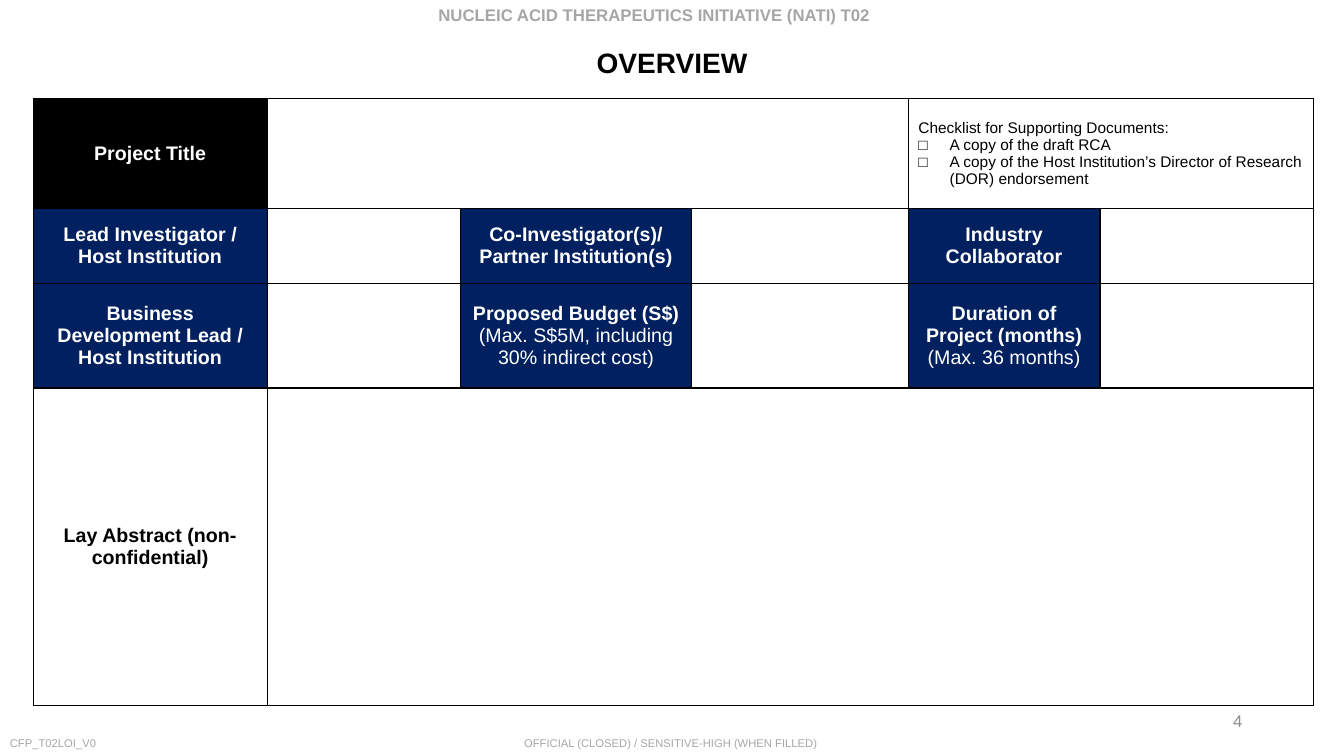
from dataclasses import dataclass

from lxml import etree
from pptx import Presentation
from pptx.dml.color import RGBColor
from pptx.enum.text import MSO_ANCHOR, PP_ALIGN
from pptx.oxml.ns import qn
from pptx.util import Inches, Pt

LEFT, CENTER, RIGHT = PP_ALIGN.LEFT, PP_ALIGN.CENTER, PP_ALIGN.RIGHT
TOP, MIDDLE = MSO_ANCHOR.TOP, MSO_ANCHOR.MIDDLE


@dataclass(frozen=True)
class Theme:
    font: str = "Arial"
    black: str = "000000"
    white: str = "FFFFFF"
    navy: str = "002060"
    muted: str = "A6A6A6"
    number: str = "8C8C8C"
    title: int = 20
    label: int = 14
    header: int = 12
    checklist: int = 11
    footer: int = 8
    border: float = 1
    bullet_indent: float = 0.31


THEME = Theme()


def add_text(p, text, size=THEME.label, color=THEME.black, bold=False, align=LEFT, bullet=None):
    p.alignment = align
    r = p.add_run()
    r.text = text
    r.font.name = THEME.font
    r.font.size = Pt(size)
    r.font.bold = bold
    r.font.color.rgb = RGBColor.from_string(color)
    if bullet:
        indent = Inches(THEME.bullet_indent)
        pPr = p._p.get_or_add_pPr()
        pPr.set("marL", str(indent))
        pPr.set("indent", str(-indent))
        etree.SubElement(pPr, qn("a:buFont"), typeface=THEME.font)
        etree.SubElement(pPr, qn("a:buChar"), char=bullet)


class SlideBuilder:
    def __init__(self, slide, theme):
        self.slide = slide
        self.theme = theme

    def text(self, box, text, wrap=True, anchor=TOP, **fmt):
        sp = self.slide.shapes.add_textbox(*map(Inches, box))
        tf = sp.text_frame
        tf.word_wrap = wrap
        tf.vertical_anchor = anchor
        add_text(tf.paragraphs[0], text, **fmt)

    def table(self, left, top, widths, heights, merges, cells):
        frame = self.slide.shapes.add_table(
            len(heights), len(widths), Inches(left), Inches(top),
            Inches(sum(widths)), Inches(sum(heights)))
        table = frame.table
        table.first_row = False
        table.horz_banding = False
        for column, width in zip(table.columns, widths):
            column.width = Inches(width)
        for row, height in zip(table.rows, heights):
            row.height = Inches(height)
        for cell in table.iter_cells():
            self.border(cell)
            cell.fill.background()
        for start, end in merges:
            table.cell(*start).merge(table.cell(*end))
        for position, (fill, lines) in cells.items():
            self.cell(table.cell(*position), fill, lines)

    def border(self, cell):
        tcPr = cell._tc.get_or_add_tcPr()
        for side in ("lnL", "lnR", "lnT", "lnB"):
            ln = etree.SubElement(tcPr, qn(f"a:{side}"), w=str(Pt(self.theme.border)))
            solid = etree.SubElement(ln, qn("a:solidFill"))
            etree.SubElement(solid, qn("a:srgbClr"), val=self.theme.black)

    def cell(self, cell, fill, lines):
        cell.vertical_anchor = MIDDLE
        if fill:
            cell.fill.solid()
            cell.fill.fore_color.rgb = RGBColor.from_string(fill)
        tf = cell.text_frame
        for i, (text, fmt) in enumerate(lines):
            p = tf.add_paragraph() if i else tf.paragraphs[0]
            add_text(p, text, **fmt)


def overview_cells(theme):
    note = dict(color=theme.white, align=CENTER)
    label = dict(note, bold=True)
    heading = dict(size=theme.checklist)
    item = dict(heading, bullet="□")
    return {
        (0, 0): (theme.black, [("Project Title", label)]),
        (0, 4): (None, [
            ("Checklist for Supporting Documents:", heading),
            ("A copy of the draft RCA", item),
            ("A copy of the Host Institution’s Director of Research (DOR) endorsement", item)]),
        (1, 0): (theme.navy, [("Lead Investigator / Host Institution", label)]),
        (1, 2): (theme.navy, [("Co-Investigator(s)/", label), ("Partner Institution(s)", label)]),
        (1, 4): (theme.navy, [("Industry Collaborator", label)]),
        (2, 0): (theme.navy, [("Business Development Lead / Host Institution", label)]),
        (2, 2): (theme.navy, [
            ("Proposed Budget (S$)", label),
            ("(Max. S$5M, including 30% indirect cost)", note)]),
        (2, 4): (theme.navy, [
            ("Duration of Project (months)", label),
            ("(Max. 36 months)", note)]),
        (3, 0): (None, [("Lay Abstract (non-confidential)", dict(label, color=theme.black))]),
    }


def main():
    prs = Presentation()
    prs.slide_width, prs.slide_height = Inches(13.33), Inches(7.5)
    s = SlideBuilder(prs.slides.add_slide(prs.slide_layouts[6]), THEME)

    footer = dict(size=THEME.footer, color=THEME.muted)
    s.text((5.1, 7.26, 3.14, 0.24), "OFFICIAL (CLOSED) / SENSITIVE-HIGH (WHEN FILLED)",
           wrap=False, **footer)
    s.text((0, 7.26, 6.67, 0.24), "CFP_T02LOI_V0", **footer)
    s.text((4.25, 0, 4.84, 0.3), "NUCLEIC ACID THERAPEUTICS INITIATIVE (NATI) T02",
           size=THEME.header, color=THEME.muted, bold=True)
    s.table(0.33, 0.98,
            widths=[2.32, 1.92, 2.29, 2.15, 1.9, 2.12],
            heights=[1.09, 0.74, 1.04, 3.15],
            merges=[((0, 1), (0, 3)), ((0, 4), (0, 5)), ((3, 1), (3, 5))],
            cells=overview_cells(THEME))
    s.text((0.99, 0.4, 11.35, 0.35), "OVERVIEW", size=THEME.title, bold=True, align=CENTER)
    s.text((9.42, 6.95, 3, 0.4), "4", anchor=MIDDLE,
           size=THEME.header, color=THEME.number, align=RIGHT)
    prs.save("out.pptx")


if __name__ == "__main__":
    main()
